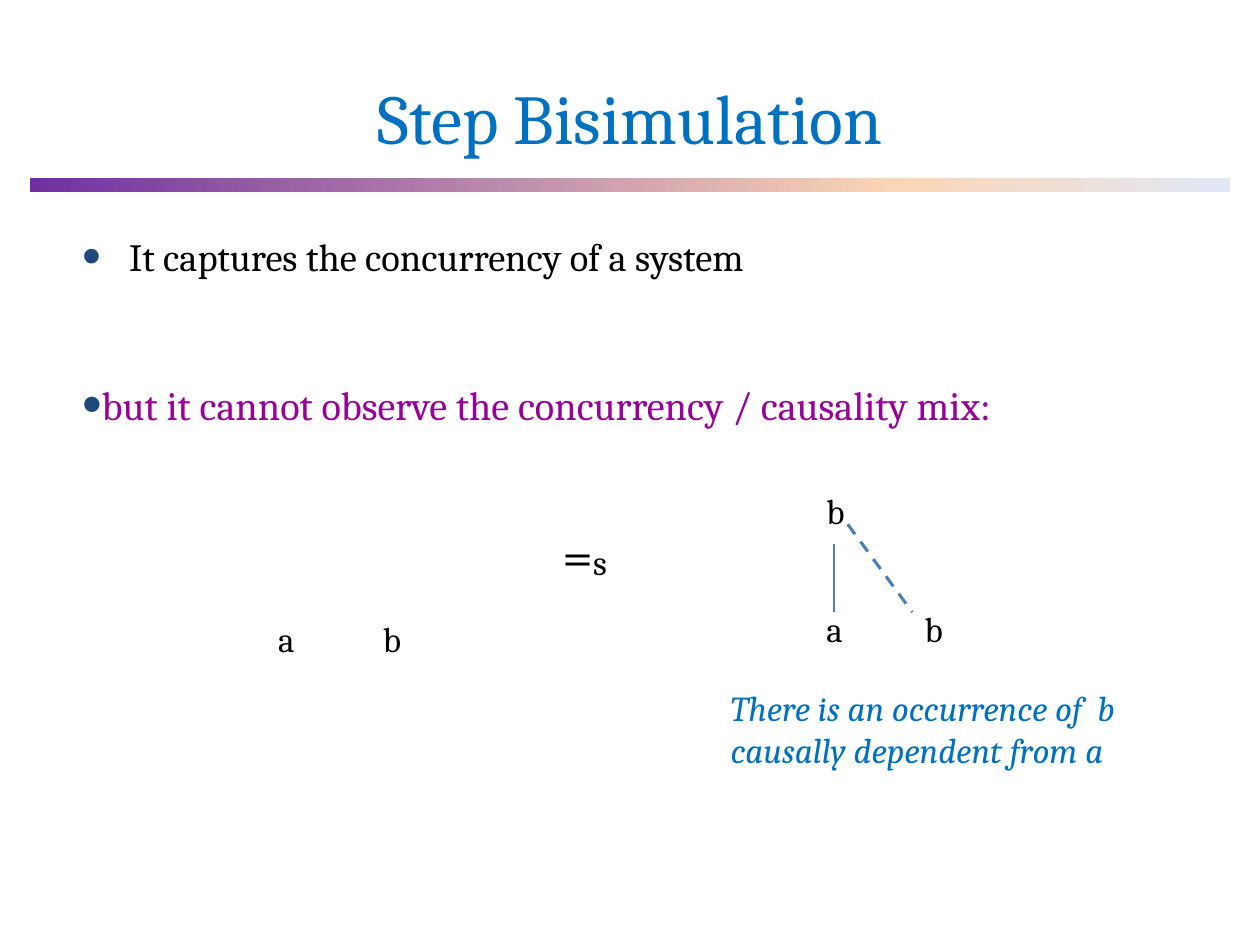
from lxml import etree
from pptx import Presentation
from pptx import util as u
from pptx.dml.color import RGBColor
from pptx.enum import dml, shapes, text
from pptx.oxml import ns

COLORS = {
    "blue": "0070C0", "black": "000000", "purple": "990099",
    "bullet": "1F497D", "line": "4B7EBC",
    "bar_start": "7030A0", "bar_middle": "FCD5B5", "bar_end": "E1E8F5",
}
FONT = "Cambria"


def color(name):
    return RGBColor.from_string(COLORS[name])


def add_child(parent, tag, **attributes):
    return etree.SubElement(parent, ns.qn(tag), attributes)


def place(shape, left, top, width, height):
    shape.left, shape.top = u.Cm(left), u.Cm(top)
    shape.width, shape.height = u.Cm(width), u.Cm(height)


def style(paragraph, size, color_name, italic=None):
    font = paragraph.font
    font.name, font.size, font.italic = FONT, u.Pt(size), italic
    font.color.rgb = color(color_name)


def add_gradient_bar(slide, left, top, width, height):
    bar = slide.shapes.add_shape(shapes.MSO_SHAPE.RECTANGLE, u.Cm(left),
                                 u.Cm(top), u.Cm(width), u.Cm(height))
    bar.shadow.inherit = False
    bar.line.fill.background()
    bar.fill.gradient()
    bar.fill.gradient_angle = 0
    stops = bar.element.spPr.find(".//" + ns.qn("a:gsLst"))
    for stop in list(stops):
        stops.remove(stop)
    for percent, name in ((0, "bar_start"), (72, "bar_middle"), (100, "bar_end")):
        stop = add_child(stops, "a:gs", pos=str(percent * 1000))
        add_child(stop, "a:srgbClr", val=COLORS[name])


def fill_title(title, words):
    place(title, 1.27, 0.76, 22.86, 3.18)
    title.text_frame.text = words
    title.text_frame.vertical_anchor = text.MSO_ANCHOR.MIDDLE
    paragraph = title.text_frame.paragraphs[0]
    paragraph.alignment = text.PP_ALIGN.CENTER
    style(paragraph, 40, "blue")


def fill_bullet(body, words, top, height, margin, indent, before, size, color_name):
    place(body, 1.4, top, 22.86, height)
    frame = body.text_frame
    frame.text = words
    frame.auto_size = text.MSO_AUTO_SIZE.NONE
    paragraph = frame.paragraphs[0]
    paragraph.space_before = u.Pt(before)
    properties = paragraph._p.get_or_add_pPr()
    properties.set("marL", str(u.Cm(margin)))
    properties.set("indent", str(u.Cm(indent)))
    bullet_color = add_child(properties, "a:buClr")
    add_child(bullet_color, "a:srgbClr", val=COLORS["bullet"])
    add_child(properties, "a:buSzPct", val="140000")
    add_child(properties, "a:buFont", typeface="Arial")
    add_child(properties, "a:buChar", char="•")
    style(paragraph, size, color_name)


def add_label(slide, words, left, top, width, height=1.11, size=20,
              color_name="black", italic=None):
    box = slide.shapes.add_textbox(u.Cm(left), u.Cm(top), u.Cm(width), u.Cm(height))
    frame = box.text_frame
    frame.word_wrap = False
    frame.auto_size = text.MSO_AUTO_SIZE.SHAPE_TO_FIT_TEXT
    frame.text = words
    for paragraph in frame.paragraphs:
        style(paragraph, size, color_name, italic)


def add_line(slide, start, end, width, dash=None):
    points = [u.Cm(value) for value in (*start, *end)]
    line = slide.shapes.add_connector(shapes.MSO_CONNECTOR.STRAIGHT, *points)
    line.line.color.rgb = color("line")
    line.line.width = u.Pt(width)
    if dash:
        line.line.dash_style = dash
    add_child(line.element.spPr, "a:effectLst")


def main():
    presentation = Presentation()
    presentation.slide_width, presentation.slide_height = u.Cm(25.4), u.Cm(19.05)
    two_content = presentation.slide_layouts[3]
    slide = presentation.slides.add_slide(two_content)
    title, first_body, second_body = list(slide.placeholders)[:3]

    # Heading
    add_gradient_bar(slide, 0.6, 3.58, 24.2, 0.3)
    fill_title(title, "Step Bisimulation")

    # Statements
    fill_bullet(first_body, "It captures the concurrency of a system",
                4.57, 2.57, 0.95, -0.95, 4.4, 22, "black")
    fill_bullet(second_body, "but it cannot observe the concurrency / causality mix:",
                7.54, 2.18, 0.25, -0.76, 5, 23, "purple")

    # Left system: a and b are independent
    add_label(slide, "a", 5.36, 12.32, 0.86)
    add_label(slide, "b", 7.47, 12.32, 0.91)

    # Step equivalence sign
    add_label(slide, "=", 11.1, 10.36, 1.14, 1.63, size=32)
    add_label(slide, "s", 11.71, 10.77, 0.81)

    # Right system: one b depends on a
    add_label(slide, "a", 16.41, 12.12, 0.86)
    add_label(slide, "b", 18.39, 12.12, 0.91)
    add_label(slide, "b", 16.41, 9.75, 0.91)
    add_line(slide, (16.81, 10.97), (16.81, 12.34), 1.5)
    add_line(slide, (17.09, 10.57), (18.39, 12.34), 1.75, dml.MSO_LINE.DASH)
    add_label(slide, "There is an occurrence of  b\ncausally dependent from a",
              14.48, 13.72, 9.07, 1.96, color_name="blue", italic=True)

    presentation.save("out.pptx")


if __name__ == "__main__":
    main()
